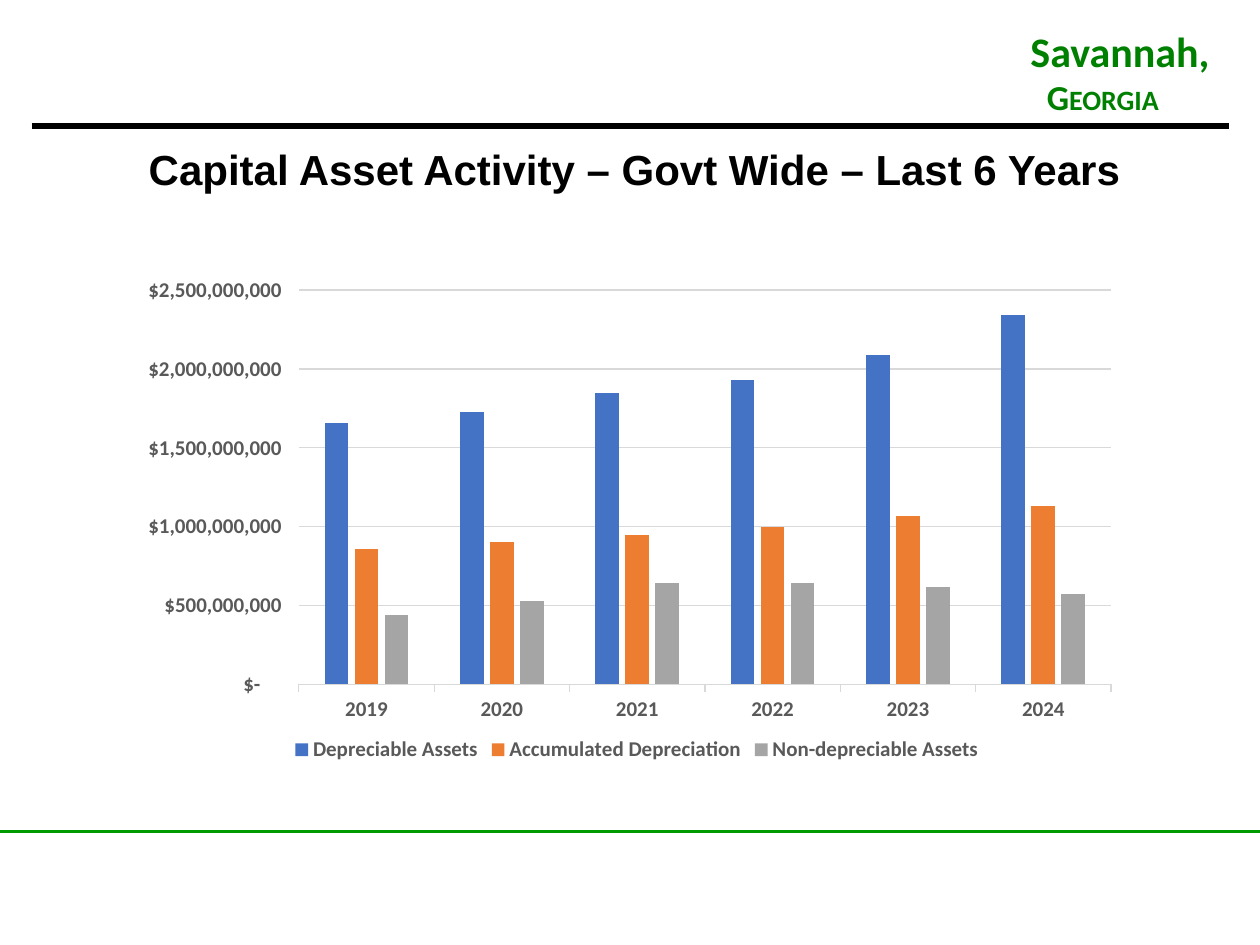
import pptx
import pptx.chart.data
import pptx.dml.color
import pptx.enum.chart
import pptx.enum.shapes
import pptx.enum.text
import pptx.oxml
import pptx.oxml.ns
import pptx.util
from pptx.util import Inches

YEARS = ["2019", "2020", "2021", "2022", "2023", "2024"]
ASSETS_IN_MILLIONS = [
    ("Depreciable Assets", "4472C4", [1660, 1730, 1850, 1930, 2090, 2340]),
    ("Accumulated Depreciation", "ED7D31", [860, 900, 950, 1000, 1070, 1130]),
    ("Non-depreciable Assets", "A5A5A5", [440, 530, 640, 640, 620, 570]),
]
DOLLAR_FORMAT = r'_("$"* #,##0_);_("$"* \(#,##0\);_("$"* "-"??_);_(@_)'
PLOT_LAYOUT = {"x": 0.16, "y": 0.147, "w": 0.817, "h": 0.705}


def color(hex_string):
    """Return the colour for a hex string."""
    return pptx.dml.color.RGBColor.from_string(hex_string)


def set_font(font, name, size, hex_string, bold=True):
    """Format a font."""
    font.name = name
    font.size = pptx.util.Pt(size)
    font.bold = bold
    font.color.rgb = color(hex_string)


def set_line(line, hex_string, width):
    """Format a line."""
    line.color.rgb = color(hex_string)
    line.width = pptx.util.Pt(width)


def add_rule(slide, left, top, width, hex_string, weight):
    """Draw a horizontal rule without a shadow."""
    rule = slide.shapes.add_connector(
        pptx.enum.shapes.MSO_CONNECTOR.STRAIGHT, left, top, left + width, top)
    set_line(rule.line, hex_string, weight)
    properties = rule._element.spPr
    properties.append(pptx.oxml.parse_xml(
        f"<a:effectLst {pptx.oxml.ns.nsdecls('a')}/>"))


def add_city_name(slide, left, top, width, height):
    """Write the city and, indented in small capitals, the state."""
    frame = slide.shapes.add_textbox(left, top, width, height).text_frame
    frame.word_wrap = False
    frame.text = "Savannah,\nGeorgia"
    city, state = frame.paragraphs
    set_font(city.font, "Calibri", 24, "008000")
    state._p.get_or_add_pPr().set("marL", str(Inches(0.13)))
    set_font(state.font, "Calibri", 20, "008000")
    state.runs[0]._r.get_or_add_rPr().set("cap", "small")


def place_title(slide, left, top, width, height):
    """Move, fill and format the title placeholder."""
    title = slide.shapes.title
    title.left, title.top, title.width, title.height = left, top, width, height
    frame = title.text_frame
    frame.text = "Capital Asset Activity – Govt Wide – Last 6 Years"
    frame.word_wrap = False
    frame.auto_size = pptx.enum.text.MSO_AUTO_SIZE.NONE
    frame.vertical_anchor = pptx.enum.text.MSO_ANCHOR.TOP
    paragraph = frame.paragraphs[0]
    paragraph.alignment = pptx.enum.text.PP_ALIGN.CENTER
    set_font(paragraph.font, "Arial", 24, "000000")


def set_plot_layout(chart):
    """Fix the inner plot area as fractions of the chart."""
    fractions = "".join(f'<c:{key}Mode val="edge"/>' for key in "xy")
    fractions += "".join(
        f'<c:{key} val="{value}"/>' for key, value in PLOT_LAYOUT.items())
    layout = pptx.oxml.parse_xml(
        f"<c:layout {pptx.oxml.ns.nsdecls('c')}><c:manualLayout>"
        f'<c:layoutTarget val="inner"/>{fractions}'
        "</c:manualLayout></c:layout>")
    plot_area = chart._chartSpace.chart.plotArea
    for old_layout in plot_area.findall(pptx.oxml.ns.qn("c:layout")):
        plot_area.remove(old_layout)
    plot_area.insert(0, layout)


def add_asset_chart(slide, left, top, width, height):
    """Add the clustered columns of capital assets by year."""
    chart_data = pptx.chart.data.CategoryChartData()
    chart_data.categories = YEARS
    for name, _, millions in ASSETS_IN_MILLIONS:
        chart_data.add_series(name, [value * 1_000_000 for value in millions])
    chart = slide.shapes.add_chart(
        pptx.enum.chart.XL_CHART_TYPE.COLUMN_CLUSTERED,
        left, top, width, height, chart_data).chart
    chart.has_title = False
    set_font(chart.font, "Calibri", 10, "000000", bold=False)
    set_plot_layout(chart)

    plot = chart.plots[0]
    plot.vary_by_categories = False
    plot.gap_width = 219
    plot.overlap = -27
    for series, (_, hex_string, _) in zip(plot.series, ASSETS_IN_MILLIONS):
        series.format.fill.solid()
        series.format.fill.fore_color.rgb = color(hex_string)

    chart.has_legend = True
    chart.legend.position = pptx.enum.chart.XL_LEGEND_POSITION.BOTTOM
    chart.legend.include_in_layout = False
    years, dollars = chart.category_axis, chart.value_axis
    for font in (chart.legend.font, years.tick_labels.font,
                 dollars.tick_labels.font):
        set_font(font, "Calibri", 12, "595959")
    set_line(years.format.line, "D9D9D9", 0.75)
    set_line(dollars.major_gridlines.format.line, "D9D9D9", 0.75)
    dollars.format.line.fill.background()
    dollars.minimum_scale = 0
    dollars.maximum_scale = 2_500_000_000
    dollars.major_unit = 500_000_000
    dollars.tick_labels.number_format = DOLLAR_FORMAT
    dollars.tick_labels.number_format_is_linked = False


def main():
    """Build and save the slide."""
    presentation = pptx.Presentation()
    presentation.slide_width = Inches(10)
    presentation.slide_height = Inches(7.5)
    slide = presentation.slides.add_slide(presentation.slide_layouts[5])
    add_rule(slide, Inches(-0.01), Inches(6.6), Inches(10.02), "009900", 2)
    add_city_name(slide, Inches(8.08), Inches(0.15), Inches(1.88), Inches(0.84))
    add_rule(slide, Inches(0.25), Inches(1), Inches(9.5), "000000", 3)
    place_title(slide, Inches(1.04), Inches(1.09), Inches(7.99), Inches(0.5))
    add_asset_chart(slide, Inches(1.11), Inches(1.65), Inches(7.89), Inches(4.44))
    presentation.save("out.pptx")


if __name__ == "__main__":
    main()
